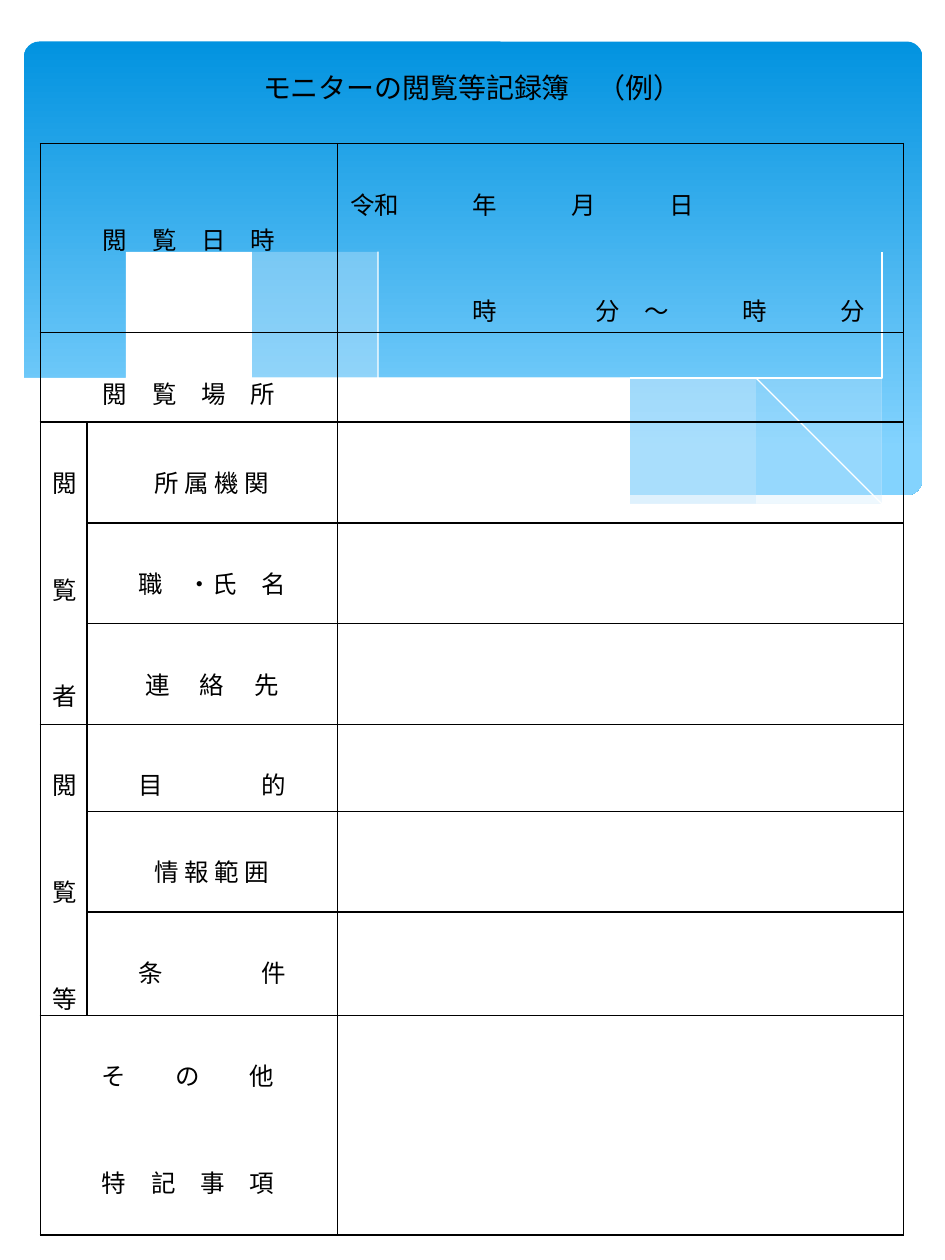
from dataclasses import dataclass
from typing import Optional

from lxml.etree import SubElement
from pptx import Presentation
from pptx.dml.color import RGBColor
from pptx.enum.dml import MSO_THEME_COLOR
from pptx.enum.shapes import MSO_SHAPE
from pptx.enum.text import MSO_ANCHOR, PP_ALIGN
from pptx.oxml.ns import qn
from pptx.util import Inches, Pt

Point = tuple[float, float]


@dataclass(frozen=True)
class Theme:
    font: str = "Noto Sans CJK JP"
    title_size: int = 16
    body_size: int = 14
    line_height: float = 20.3
    border: int = 1
    ink: str = "000000"
    white: str = "FFFFFF"
    mist: str = "C6E7FC"
    sky_top: str = "0293E0"
    sky_bottom: str = "83D3FE"


@dataclass(frozen=True)
class Wave:
    curves: list[list[Point]]
    fill: Optional[str] = None
    alpha: int = 100


@dataclass(frozen=True)
class Entry:
    row: int
    column: int
    lines: list[str]
    lead: int = 1
    rows: int = 1
    columns: int = 1
    align: PP_ALIGN = PP_ALIGN.CENTER
    indents: tuple[int, ...] = ()


THEME = Theme()
COLUMNS = [0.37, 1.99, 4.49]
ROWS = [1.5, 0.71, 0.8, 0.8, 0.8, 0.69, 0.8, 0.77, 1.74]

WAVES = [
    Wave([
        [(7.32, 2.66), (6.9, 2.79), (6.45, 2.98), (5.84, 3.23), (5.29, 3.43), (4.96, 3.54)],
        [(4.96, 3.54), (5.29, 3.61), (5.68, 3.68), (6.1, 3.7), (6.47, 3.67), (6.79, 3.58),
         (7.07, 3.46), (7.32, 3.29)],
    ], THEME.mist, 29),
    Wave([
        [(6.7, 3.63), (6.28, 3.53), (5.81, 3.39), (5.29, 3.2), (4.72, 2.95), (4.27, 2.77),
         (3.86, 2.64), (3.48, 2.55), (3.15, 2.5), (2.85, 2.47), (2.46, 2.49), (2.15, 2.55)],
        [(2.15, 2.55), (2.57, 2.66), (3.03, 2.81), (3.37, 2.95), (3.97, 3.21), (4.51, 3.4),
         (4.99, 3.55), (5.42, 3.65), (5.8, 3.7), (6.13, 3.71), (6.43, 3.69), (6.7, 3.63)],
    ], THEME.mist, 40),
    Wave([[(2.32, 2.61), (2.58, 2.53), (2.9, 2.5), (3.24, 2.49), (3.67, 2.53), (4.17, 2.62),
           (4.77, 2.77), (5.45, 3.01), (6.23, 3.34), (6.81, 3.62)]]),
    Wave([[(4.6, 3.42), (5.04, 3.21), (5.61, 2.97), (6.04, 2.8), (6.5, 2.65), (6.93, 2.53),
           (7.31, 2.47)]]),
    Wave([
        [(7.33, 3.28), (7.05, 3.46), (6.74, 3.59), (6.38, 3.67), (5.95, 3.69), (5.45, 3.63),
         (4.86, 3.49), (4.16, 3.26), (3.35, 2.93), (2.73, 2.69), (2.19, 2.54), (1.72, 2.47),
         (1.32, 2.45), (0.99, 2.48), (0.71, 2.54), (0.44, 2.65), (0.17, 2.84)],
        [(0.17, 4.39), (7.33, 4.39)],
    ], THEME.white),
]

ENTRIES = [
    Entry(0, 0, ["閲　覧　日　時"], lead=2, columns=2),
    Entry(0, 2, ["令和　　　年　　　月　　　日", "時　　　　分　～　　　時　　　分"],
          align=PP_ALIGN.LEFT, indents=(0, 5)),
    Entry(1, 0, ["閲　覧　場　所"], columns=2),
    Entry(2, 0, ["閲", "覧", "者"], rows=3),
    Entry(2, 1, ["所 属 機 関"]),
    Entry(3, 1, ["職　・氏　名"]),
    Entry(4, 1, ["連　 絡 　先"]),
    Entry(5, 0, ["閲", "覧", "等"], rows=3),
    Entry(5, 1, ["目　　　　的"]),
    Entry(6, 1, ["情 報 範 囲"]),
    Entry(7, 1, ["条　　　　件"]),
    Entry(8, 0, ["そ　　の　　他", "特　記　事　項"], columns=2,
          align=PP_ALIGN.LEFT, indents=(2, 2)),
]


def color(value: str) -> RGBColor:
    return RGBColor.from_string(value)


def style_paragraph(paragraph, size: int, align: PP_ALIGN) -> None:
    paragraph.alignment = align
    paragraph.font.size = Pt(size)
    paragraph.font.name = THEME.font
    paragraph.font.color.rgb = color(THEME.ink)
    SubElement(paragraph.font._element, qn("a:ea"), typeface=THEME.font)


def smooth(knots: list[Point], steps: int = 6) -> list[Point]:
    padded = [knots[0], *knots, knots[-1]]
    points = [knots[0]]
    for a, b, c, d in zip(padded, padded[1:], padded[2:], padded[3:]):
        for step in range(1, steps + 1):
            t = step / steps
            x, y = (
                q + t * (r - p) / 2 + t**2 * (2 * p - 5 * q + 4 * r - s) / 2
                + t**3 * (3 * q - p - 3 * r + s) / 2
                for p, q, r, s in zip(a, b, c, d)
            )
            points.append((x, y))
    return points


def draw_sky(slide) -> None:
    sky = slide.shapes.add_shape(
        MSO_SHAPE.ROUNDED_RECTANGLE, Inches(0.19), Inches(0.33), Inches(7.13), Inches(3.6))
    sky.adjustments[0] = 0.034
    sky.shadow.inherit = False
    sky.line.fill.background()
    sky.fill.gradient()
    sky.fill.gradient_angle = 270
    stops = [(0, THEME.sky_top), (0.9, THEME.sky_bottom)]
    for stop, (position, tint) in zip(sky.fill.gradient_stops, stops):
        stop.position = position
        stop.color.theme_color = MSO_THEME_COLOR.ACCENT_1
        stop.color.rgb = color(tint)


def draw_wave(slide, wave: Wave) -> None:
    points = [point for curve in wave.curves for point in smooth(curve)]
    builder = slide.shapes.build_freeform(*points[0], scale=Inches(1))
    builder.add_line_segments(points[1:], close=wave.fill is not None)
    shape = builder.convert_to_shape()
    shape.shadow.inherit = False
    if wave.fill is None:
        shape.fill.background()
        shape.line.color.rgb = color(THEME.white)
        shape.line.width = Pt(0)
        return
    shape.line.fill.background()
    shape.fill.solid()
    shape.fill.fore_color.rgb = color(wave.fill)
    if wave.alpha < 100:
        tint = shape._element.spPr.find(qn("a:solidFill"))[0]
        SubElement(tint, qn("a:alpha"), val=str(wave.alpha * 1000))


def draw_title(slide, text: str) -> None:
    title = slide.shapes.title
    title.left, title.top = Inches(0.68), Inches(0.51)
    title.width, title.height = Inches(6.14), Inches(0.37)
    title.text_frame.text = text
    title.text_frame.word_wrap = True
    title.text_frame.vertical_anchor = MSO_ANCHOR.MIDDLE
    style_paragraph(title.text_frame.paragraphs[0], THEME.title_size, PP_ALIGN.CENTER)
    slide.shapes._spTree.append(title._element)


def format_cell(cell) -> None:
    properties = cell._tc.get_or_add_tcPr()
    for side in ("lnL", "lnR", "lnT", "lnB"):
        border = SubElement(properties, qn(f"a:{side}"), w=str(Pt(THEME.border)))
        paint = SubElement(border, qn("a:solidFill"))
        SubElement(paint, qn("a:srgbClr"), val=THEME.ink)
    cell.fill.background()
    cell.margin_bottom = 0


def fill_entry(table, entry: Entry) -> None:
    cell = table.cell(entry.row, entry.column)
    if entry.rows * entry.columns > 1:
        cell.merge(table.cell(entry.row + entry.rows - 1, entry.column + entry.columns - 1))
    cell.text = "\n".join(entry.lines)
    cell.margin_top = Inches(0.05) + Pt(entry.lead * THEME.line_height)
    for index, paragraph in enumerate(cell.text_frame.paragraphs):
        style_paragraph(paragraph, THEME.body_size, entry.align)
        if index:
            paragraph.space_before = Pt(2 * THEME.line_height)
        if entry.indents:
            indent = Pt(entry.indents[index] * THEME.body_size)
            paragraph._p.get_or_add_pPr().set("marL", str(indent))


def draw_record(slide) -> None:
    table = slide.shapes.add_table(
        len(ROWS), len(COLUMNS), Inches(0.32), Inches(1.14),
        Inches(sum(COLUMNS)), Inches(sum(ROWS))).table
    table.first_row = table.horz_banding = False
    for column, width in zip(table.columns, COLUMNS):
        column.width = Inches(width)
    for row, height in zip(table.rows, ROWS):
        row.height = Inches(height)
    for cell in table.iter_cells():
        format_cell(cell)
    for entry in ENTRIES:
        fill_entry(table, entry)


def main() -> None:
    presentation = Presentation()
    presentation.slide_width, presentation.slide_height = Inches(7.5), Inches(10)
    slide = presentation.slides.add_slide(presentation.slide_layouts[5])
    draw_sky(slide)
    for wave in WAVES:
        draw_wave(slide, wave)
    draw_title(slide, "モニターの閲覧等記録簿　（例）")
    draw_record(slide)
    presentation.save("out.pptx")


if __name__ == "__main__":
    main()
